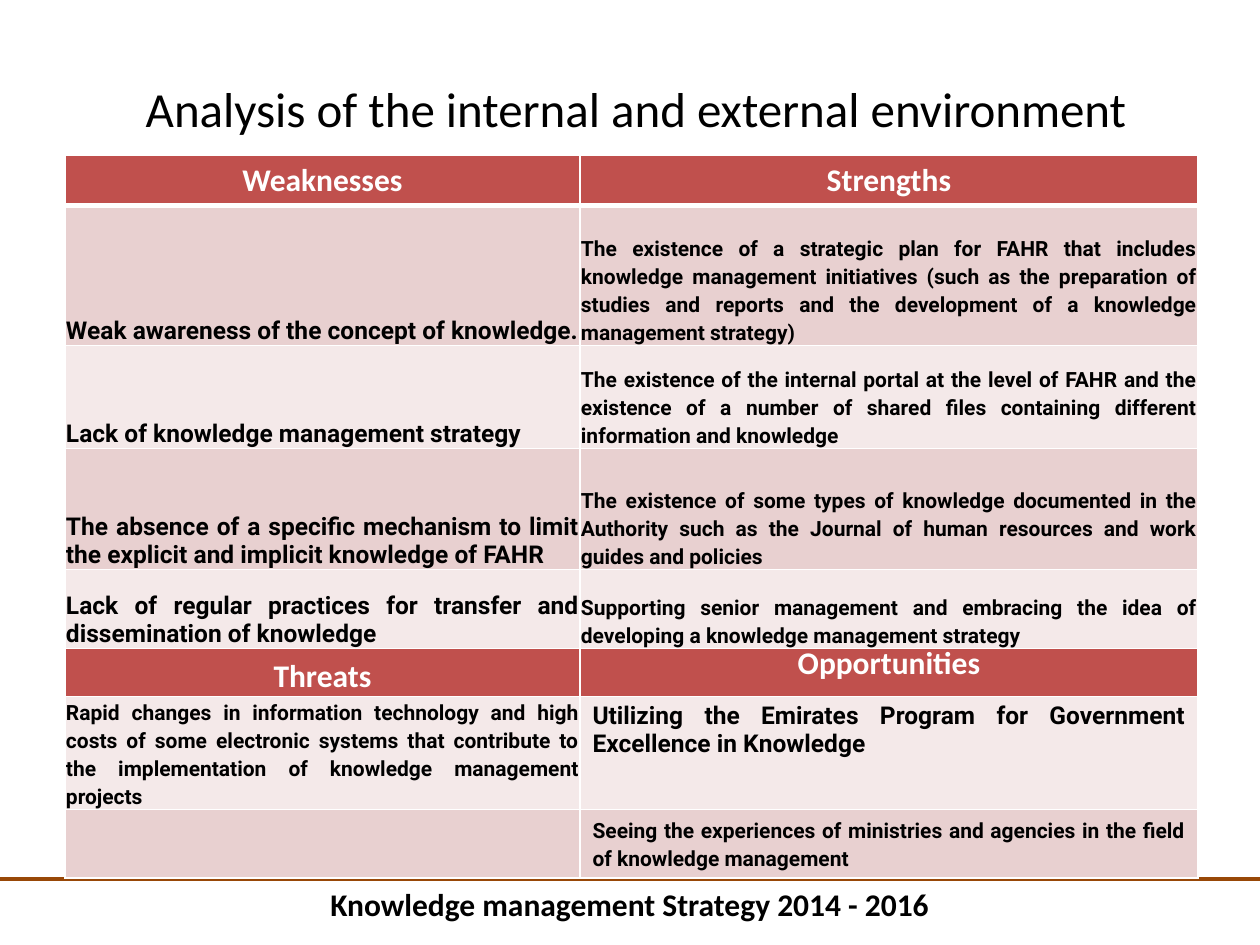
from lxml.etree import SubElement as Sub
from pptx import Presentation
from pptx.dml.color import RGBColor as RGB
from pptx.enum.shapes import MSO_CONNECTOR as CONN
from pptx.enum.text import MSO_ANCHOR as ANC, PP_ALIGN as AL
from pptx.oxml.ns import qn
from pptx.util import Emu, Pt

# Content: cells are (text, size, tight); tight cells have thin margins, bottom text
TITLE = "Analysis of the internal and external environment"
FOOT = "Knowledge management Strategy 2014 - 2016"
ROWS = [
    (48, "head", ("Weaknesses", 18, False), ("Strengths", 18, False)),
    (140, "dark", ("Weak awareness of the concept of knowledge.", 14, True),
     ("The existence of a strategic plan for FAHR that includes knowledge "
      "management initiatives (such as the preparation of studies and reports "
      "and the development of a knowledge management strategy)", 12, True)),
    (103, "light", ("Lack of knowledge management strategy", 14, True),
     ("The existence of the internal portal at the level of FAHR and the "
      "existence of a number of shared files containing different information "
      "and knowledge", 12, True)),
    (121, "dark", ("The absence of a specific mechanism to limit the explicit "
                   "and implicit knowledge of FAHR", 14, True),
     ("The existence of some types of knowledge documented in the Authority such "
      "as the Journal of human resources and work guides and policies", 12, True)),
    (79, "light", ("Lack of regular practices for transfer and dissemination "
                   "of knowledge", 14, True),
     ("Supporting senior management and embracing the idea of developing a "
      "knowledge management strategy", 12, True)),
    (48, "head", ("Threats", 18, True), ("Opportunities", 18, False)),
    (103, "light", ("Rapid changes in information technology and high costs of "
                    "some electronic systems that contribute to the "
                    "implementation of knowledge management projects", 12, True),
     ("Utilizing the Emirates Program for Government Excellence in Knowledge",
      14, False)),
    (60, "dark", ("", 12, False),
     ("Seeing the experiences of ministries and agencies in the field of "
      "knowledge management", 12, False)),
]
COLS = [515, 618]
HEX = {"head": "C0504D", "dark": "E8D0D0", "light": "F4E9E9",
       "white": "FFFFFF", "black": "000000", "rule": "984807"}


def px(n):
    return Emu(round(n * 914400 / 126))


def color(name):
    return RGB.from_string(HEX[name])


def style(para, size, face="Calibri", tone="black", bold=False):
    font = para.font
    font.size, font.name, font.bold = Pt(size), face, bold
    font.color.rgb = color(tone)


def label(slide, text, box, size, bold, wrap):
    frame = slide.shapes.add_textbox(*map(px, box)).text_frame
    frame.word_wrap = wrap
    para = frame.paragraphs[0]
    para.text = text
    style(para, size, bold=bold)
    return frame


def edge(cell, row):
    """White grid, thicker below the first row."""
    props = cell._tc.get_or_add_tcPr()
    for side in "LRTB":
        thick = (row, side) in ((0, "B"), (1, "T"))
        line = Sub(props, qn(f"a:ln{side}"), w=str(Pt(3 if thick else 1)))
        Sub(Sub(line, qn("a:solidFill")), qn("a:srgbClr"), val=HEX["white"])


def fill(cell, row, kind, text, size, tight):
    edge(cell, row)
    cell.fill.solid()
    cell.fill.fore_color.rgb = color(kind)
    if tight:
        cell.vertical_anchor = ANC.BOTTOM
        cell.margin_left = cell.margin_top = cell.margin_right = px(1)
        cell.margin_bottom = 0
    para = cell.text_frame.paragraphs[0]
    para.text = text
    if row:
        para.line_spacing = Pt(16)
    if kind == "head":
        para.alignment = AL.CENTER
        para._p.get_or_add_pPr().set("rtl", "1")
        style(para, size, tone="white", bold=True)
    else:
        para.alignment = AL.JUSTIFY
        style(para, size, "Roboto", bold=True)


def main():
    deck = Presentation()
    deck.slide_width, deck.slide_height = px(1260), px(945)
    slide = deck.slides.add_slide(deck.slide_layouts[6])

    # Footer and its rule
    label(slide, FOOT, (318, 879, 630, 50), 18, True, False)
    rule = slide.shapes.add_connector(CONN.STRAIGHT, 0, px(879), px(1260), px(879))
    rule.line.color.rgb = color("rule")
    rule.line.width = Pt(2.25)
    Sub(rule._element.spPr, qn("a:effectLst"))

    # Title
    title = label(slide, TITLE, (69, 29, 1134, 158), 28, False, True)
    title.vertical_anchor = ANC.MIDDLE
    title.paragraphs[0].alignment = AL.CENTER

    # Analysis table
    high = sum(row[0] for row in ROWS)
    table = slide.shapes.add_table(len(ROWS), len(COLS), px(65), px(155),
                                   px(sum(COLS)), px(high)).table
    table.first_row = table.horz_banding = False
    for col, wide in zip(table.columns, COLS):
        col.width = px(wide)
    for r, (tall, kind, *cells) in enumerate(ROWS):
        table.rows[r].height = px(tall)
        for c, item in enumerate(cells):
            fill(table.cell(r, c), r, kind, *item)

    deck.save("out.pptx")


if __name__ == "__main__":
    main()
